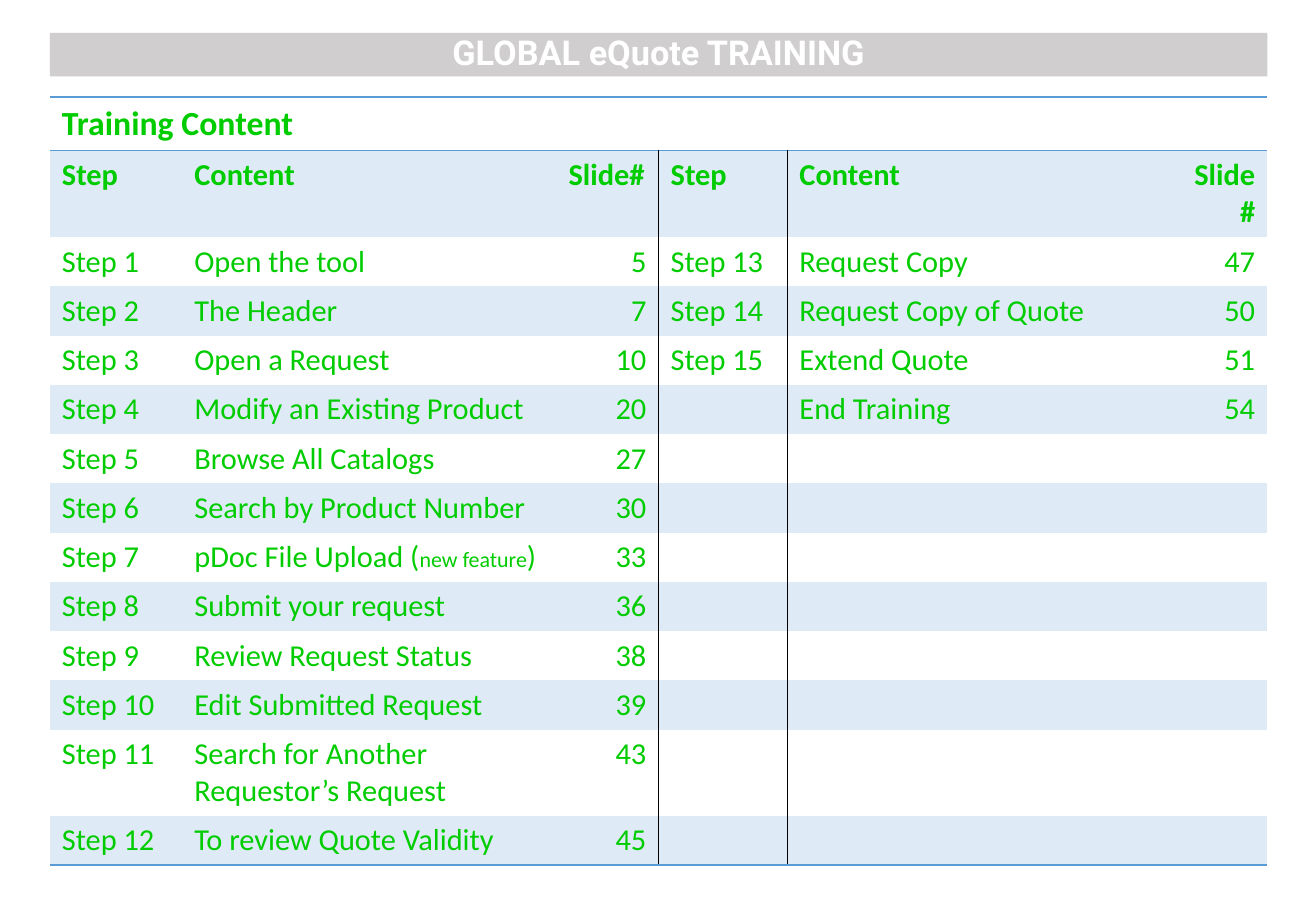
from pptx import Presentation
from pptx.dml.color import RGBColor
from pptx.enum.text import MSO_ANCHOR, PP_ALIGN
from pptx.oxml import parse_xml
from pptx.oxml.ns import nsdecls, qn
from pptx.util import Inches, Pt

COLORS = {
    "bar": "D0CECE",
    "white": "FFFFFF",
    "green": "00CC00",
    "band": "DEEBF7",
    "blue": "5B9BD5",
    "black": "000000",
}
NO_STYLE = "{2D5ABB26-0587-4C30-8999-92F81FD0307C}"
LEFT, WIDTH = 0.41, 10.02
COLS = [1.09, 3.08, 0.84, 1.06, 3.13, 0.82]
ROW = 0.4

HEAD = ["Step", "Content", "Slide#"]
# A content entry is a text, or a list of (text, size) runs
FIRST = [
    ("Open the tool", 5),
    ("The Header", 7),
    ("Open a Request", 10),
    ("Modify an Existing Product", 20),
    ("Browse All Catalogs", 27),
    ("Search by Product Number", 30),
    ([("pDoc File Upload (", 18), ("new feature", 13), (")", 18)], 33),
    ("Submit your request", 36),
    ("Review Request Status", 38),
    ("Edit Submitted Request", 39),
    ("Search for Another Requestor’s Request", 43),
    ("To review Quote Validity", 45),
]
SECOND = [
    ("Step 13", "Request Copy", 47),
    ("Step 14", "Request Copy of Quote", 50),
    ("Step 15", "Extend Quote", 51),
    ("", "End Training", 54),
]


def rgb(name):
    return RGBColor.from_string(COLORS[name])


def write(frame, text, size=18, font="Calibri", color="green", bold=False,
          align=PP_ALIGN.LEFT, spacing=None):
    para = frame.paragraphs[0]
    para.alignment = align
    if spacing:
        para.line_spacing = spacing
    para.font.size = Pt(size)
    if not text:
        # An empty cell keeps its line height from the end mark
        para._p.get_or_add_endParaRPr().set("sz", str(size * 100))
        return
    for part, points in text if isinstance(text, list) else [(text, size)]:
        run = para.add_run()
        run.text = part
        run.font.size = Pt(points)
        run.font.name = font
        run.font.bold = bold
        run.font.color.rgb = rgb(color)


class Deck:
    def __init__(self, width, height):
        self.prs = Presentation()
        self.prs.slide_width = Inches(width)
        self.prs.slide_height = Inches(height)
        self.slide = self.prs.slides.add_slide(self.prs.slide_layouts[5])

    def title(self, text, left, top, width, height):
        bar = self.slide.shapes.title
        bar.left, bar.top = Inches(left), Inches(top)
        bar.width, bar.height = Inches(width), Inches(height)
        bar.fill.solid()
        bar.fill.fore_color.rgb = rgb("bar")
        bar.text_frame.vertical_anchor = MSO_ANCHOR.MIDDLE
        write(bar.text_frame, text, size=20.3, font="Roboto", color="white",
              bold=True, align=PP_ALIGN.CENTER, spacing=0.9)

    def table(self, rows, left, top, cols, height):
        frame = self.slide.shapes.add_table(
            rows, len(cols), Inches(left), Inches(top),
            Inches(sum(cols)), Inches(rows * height))
        table = frame.table
        table.first_row = table.horz_banding = False
        table._tbl.tblPr.find(qn("a:tableStyleId")).text = NO_STYLE
        for col, width in zip(table.columns, cols):
            col.width = Inches(width)
        for row in table.rows:
            row.height = Inches(height)
        return table

    def cell(self, cell, text, edges, fill=None, **style):
        # Edges go in the order L, R, T, B, ahead of the fill
        props = cell._tc.get_or_add_tcPr()
        for side in "LRTB":
            if side in edges:
                props.append(parse_xml(
                    f'<a:ln{side} {nsdecls("a")} w="{Pt(1)}"><a:solidFill>'
                    f'<a:srgbClr val="{COLORS[edges[side]]}"/>'
                    f'</a:solidFill></a:ln{side}>'))
        if fill:
            cell.fill.solid()
            cell.fill.fore_color.rgb = rgb(fill)
        else:
            cell.fill.background()
        write(cell.text_frame, text, **style)


def main():
    deck = Deck(10.83, 7.5)
    deck.title("GLOBAL eQuote TRAINING", LEFT, 0.27, WIDTH, 0.36)

    # Both halves side by side, the second filled up with empty cells
    rows = [HEAD + HEAD]
    for i, (name, page) in enumerate(FIRST):
        right = SECOND[i] if i < len(SECOND) else ("", "", "")
        rows.append([f"Step {i + 1}", name, str(page),
                     *right[:2], str(right[2])])
    table = deck.table(len(rows) + 1, LEFT, 0.8, COLS, ROW)

    # Heading row across all columns
    for c in range(len(COLS)):
        deck.cell(table.cell(0, c), "" if c else "Training Content",
                  {"T": "blue", "B": "blue"}, size=20, bold=True)
    table.cell(0, 0).merge(table.cell(0, len(COLS) - 1))

    # Banded rows with a black rule between the halves
    for r, row in enumerate(rows, 1):
        for c, text in enumerate(row):
            edges = {2: {"R": "black"}, 3: {"L": "black"}}.get(c, {})
            if r == len(rows):
                edges["B"] = "blue"
            number = c == 5 or (c == 2 and r > 1)
            deck.cell(table.cell(r, c), text, edges,
                      fill="band" if r % 2 else None, bold=r == 1,
                      align=PP_ALIGN.RIGHT if number else PP_ALIGN.LEFT)

    deck.prs.save("out.pptx")


if __name__ == "__main__":
    main()
